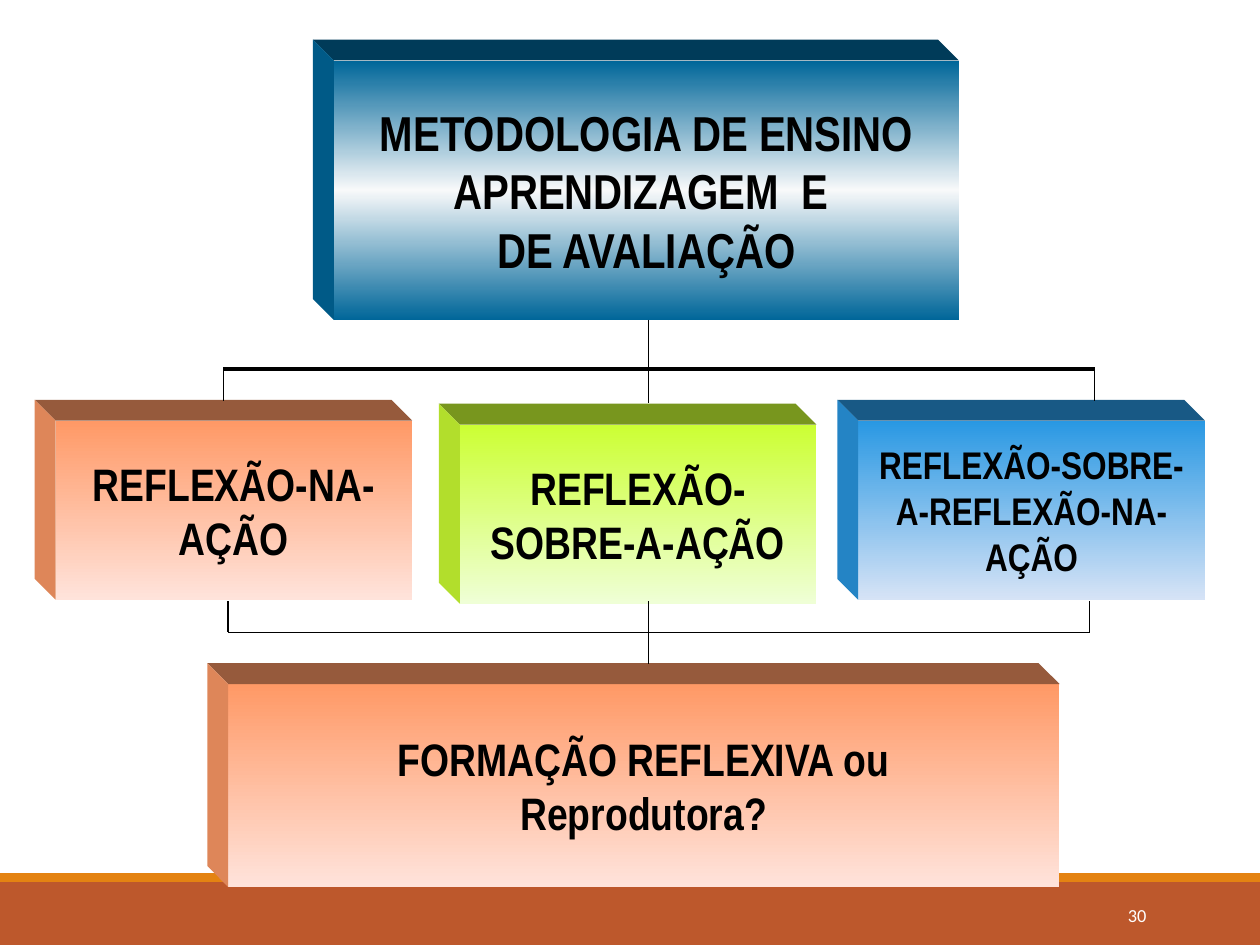
from copy import deepcopy

from lxml import etree
from pptx import Presentation
from pptx.dml.color import RGBColor
from pptx.enum import shapes, text
from pptx.oxml import ns
from pptx.util import Cm, Pt

BLACK = RGBColor(0x00, 0x00, 0x00)
WHITE = RGBColor(0xFF, 0xFF, 0xFF)
RUST = RGBColor(0xBD, 0x58, 0x2C)
AMBER = RGBColor(0xE4, 0x83, 0x12)

# Each palette: gradient stops from top to bottom, top face, side face
NAVY = ([RGBColor(0x00, 0x66, 0x99), RGBColor(0xF8, 0xF9, 0xFA), RGBColor(0x00, 0x66, 0x99)],
        RGBColor(0x00, 0x3B, 0x59), RGBColor(0x00, 0x5A, 0x87))
ORANGE = ([RGBColor(0xFF, 0x99, 0x66), RGBColor(0xFF, 0xE3, 0xDB)],
          RGBColor(0x96, 0x5A, 0x3C), RGBColor(0xDE, 0x86, 0x59))
LIME = ([RGBColor(0xCC, 0xFF, 0x33), RGBColor(0xEF, 0xFF, 0xD6)],
        RGBColor(0x78, 0x96, 0x1E), RGBColor(0xB2, 0xDE, 0x2C))
BLUE = ([RGBColor(0x29, 0x98, 0xE3), RGBColor(0xD6, 0xE3, 0xF6)],
        RGBColor(0x18, 0x59, 0x85), RGBColor(0x24, 0x84, 0xC5))

# Lengths in centimetres: left, top, width, height
TITLE = (["METODOLOGIA DE ENSINO", "APRENDIZAGEM  E ", "DE AVALIAÇÃO"],
         (6.73, 1.22, 12.6, 5.23), 28, NAVY)
BOXES = [
    (["REFLEXÃO-NA- AÇÃO"], (1.12, 8.48, 7.19, 3.61), 26, ORANGE),
    (["REFLEXÃO- SOBRE-A-AÇÃO"], (9.27, 8.56, 7.19, 3.61), 26, LIME),
    (["REFLEXÃO-SOBRE- A-REFLEXÃO-NA- AÇÃO"], (17.3, 8.48, 6.99, 3.61), 22, BLUE),
    (["FORMAÇÃO REFLEXIVA ou", "Reprodutora?"], (4.6, 13.79, 16.76, 4.09), 26, ORANGE),
]
BANDS = [((0, 17.78, 25.4, 1.27), RUST), ((0, 17.6, 25.4, 0.18), AMBER)]
DEPTH = 0.42

CENTRE = 13.08
# Left, right, bar height, end of the outer branches, span of the centre line, bar width in points
BRACKETS = [
    (4.5, 22.07, 7.44, 8.08, (6.45, 8.13), 2.25),
    (4.6, 21.97, 12.75, 12.12, (12.12, 13.39), 0.75),
]


def add_line(slide, start, end, width=0.75):
    line = slide.shapes.add_connector(
        shapes.MSO_CONNECTOR.STRAIGHT, *(Cm(value) for value in start + end))
    line.line.color.rgb = BLACK
    line.line.width = Pt(width)
    etree.SubElement(line._element.spPr, ns.qn("a:effectLst"))


def paint(shape, color):
    shape.fill.solid()
    shape.fill.fore_color.rgb = color
    shape.line.fill.background()
    shape.shadow.inherit = False


def paint_gradient(shape, colors):
    shape.fill.gradient()
    shape.fill.gradient_angle = 270
    stop_list = shape._element.spPr.find(ns.qn("a:gradFill")).find(ns.qn("a:gsLst"))
    while len(stop_list) < len(colors):
        stop_list.append(deepcopy(stop_list[-1]))
    for index, (stop, color) in enumerate(zip(shape.fill.gradient_stops, colors)):
        stop.position = index / (len(colors) - 1)
        stop.color.rgb = color


def place(shape, area):
    shape.left, shape.top, shape.width, shape.height = (Cm(value) for value in area)


def write(shape, lines, size, font_name, color, bold, alignment):
    frame = shape.text_frame
    frame.word_wrap = True
    frame.auto_size = text.MSO_AUTO_SIZE.NONE
    frame.vertical_anchor = text.MSO_ANCHOR.MIDDLE
    frame.text = "\n".join(lines)
    for paragraph in frame.paragraphs:
        paragraph.alignment = alignment
        paragraph.font.name = font_name
        paragraph.font.size = Pt(size)
        paragraph.font.bold = bold
        paragraph.font.color.rgb = color


def add_face(slide, points, color):
    (x, y), *others = [(Cm(x), Cm(y)) for x, y in points]
    builder = slide.shapes.build_freeform(x, y)
    builder.add_line_segments(others, close=True)
    paint(builder.convert_to_shape(), color)


def finish_block(slide, front, lines, area, size, palette):
    """Turn the front shape into a block with a top and a left face behind it."""
    colors, top_color, side_color = palette
    left, top, width, height = area
    right, bottom = left + width, top + height
    back_left, back_top = left - DEPTH, top - DEPTH
    place(front, area)
    paint_gradient(front, colors)
    front.line.fill.background()
    front.shadow.inherit = False
    write(front, lines, size, "Arial Narrow", BLACK, True, text.PP_ALIGN.CENTER)
    add_face(slide, [(left, top), (back_left, back_top), (right - DEPTH, back_top),
                     (right, top)], top_color)
    add_face(slide, [(left, top), (back_left, back_top), (back_left, bottom - DEPTH),
                     (left, bottom)], side_color)


def main():
    presentation = Presentation()
    presentation.slide_width, presentation.slide_height = Cm(25.4), Cm(19.05)
    slide = presentation.slides.add_slide(presentation.slide_layouts[5])

    for area, color in BANDS:
        band = slide.shapes.add_shape(
            shapes.MSO_SHAPE.RECTANGLE, *(Cm(value) for value in area))
        paint(band, color)
    number = slide.shapes.add_textbox(Cm(20.62), Cm(17.93), Cm(2.74), Cm(1.02))
    write(number, ["30"], 10.5, "Calibri", WHITE, False, text.PP_ALIGN.RIGHT)

    lines, area, size, palette = TITLE
    finish_block(slide, slide.shapes.title, lines, area, size, palette)
    for lines, area, size, palette in BOXES:
        front = slide.shapes.add_shape(
            shapes.MSO_SHAPE.RECTANGLE, *(Cm(value) for value in area))
        finish_block(slide, front, lines, area, size, palette)

    for left, right, bar, branch_end, (start, end), width in BRACKETS:
        add_line(slide, (left, bar), (right, bar), width)
        for x in (left, right):
            add_line(slide, (x, branch_end), (x, bar))
        add_line(slide, (CENTRE, start), (CENTRE, end))

    presentation.save("out.pptx")


if __name__ == "__main__":
    main()
